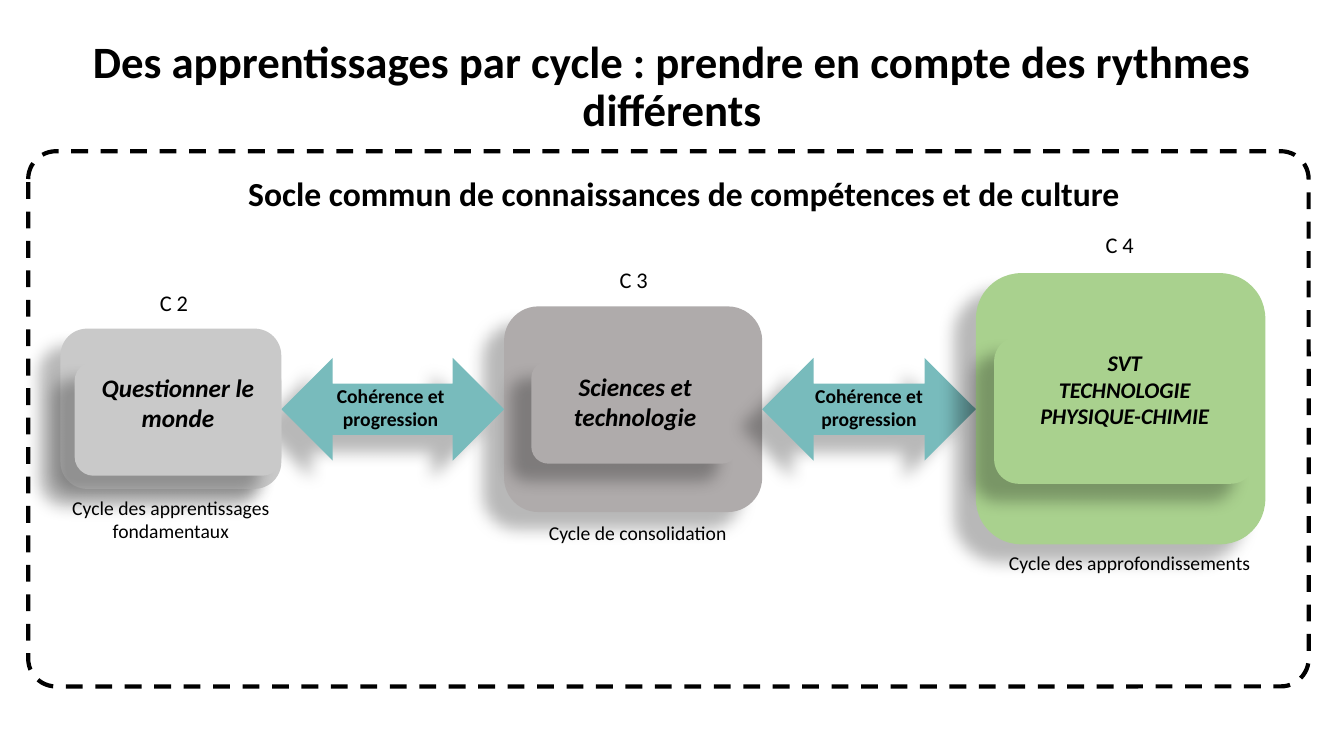
from lxml import etree
from pptx import Presentation
from pptx.dml.color import RGBColor
from pptx.enum.dml import MSO_LINE
from pptx.enum.shapes import MSO_SHAPE
from pptx.enum.text import MSO_ANCHOR, MSO_AUTO_SIZE, PP_ALIGN
from pptx.oxml.ns import qn
from pptx.util import Pt

PX = 9144
TITLE_ONLY = 5
ROUNDED = MSO_SHAPE.ROUNDED_RECTANGLE
DOUBLE_ARROW = MSO_SHAPE.LEFT_RIGHT_ARROW
DASH = MSO_LINE.DASH
TOP, MIDDLE = MSO_ANCHOR.TOP, MSO_ANCHOR.MIDDLE
NO_FIT = MSO_AUTO_SIZE.NONE
CENTER = PP_ALIGN.CENTER
FONT = "Calibri"

BLACK = RGBColor(0, 0, 0)
TAUPE = RGBColor(0xAF, 0xAB, 0xAB)
GRAY = RGBColor(0xC9, 0xC9, 0xC9)
GREEN = RGBColor(0xA9, 0xD1, 0x8E)
TEAL = RGBColor(0x78, 0xBB, 0xBC)

CYCLE_2 = dict(
    box=(60, 326, 219, 159), color=GRAY,
    subject=["Questionner le monde"], subject_box=(14, 33, 205, 113), subject_size=18,
    label="C 2", label_at=(33, -44),
    caption="Cycle des apprentissages fondamentaux", caption_box=(-14, 161, 247, 116))
CYCLE_3 = dict(
    box=(500, 304, 256, 204), color=TAUPE,
    subject=["Sciences et technologie"], subject_box=(27, 54, 206, 102), subject_size=18,
    label="C 3", label_at=(49, -45),
    caption="Cycle de consolidation", caption_box=(9, 208, 247, 82))
CYCLE_4 = dict(
    box=(968, 271, 287, 269), color=GREEN,
    subject=["SVT", "TECHNOLOGIE", "PHYSIQUE-CHIMIE"],
    subject_box=(18, 63, 259, 146), subject_size=16,
    label="C 4", label_at=(63, -47),
    caption="Cycle des approfondissements", caption_box=(9, 271, 287, 82))


def to_emu(box):
    return [length * PX for length in box]


def write(shape, lines, size, bold=False, italic=False, anchor=TOP, insets=(10, 5, 10, 5)):
    frame = shape.text_frame
    frame.word_wrap = True
    frame.auto_size = NO_FIT
    frame.vertical_anchor = anchor
    (frame.margin_left, frame.margin_top,
     frame.margin_right, frame.margin_bottom) = to_emu(insets)
    frame.text = "\n".join(lines)
    for para in frame.paragraphs:
        para.alignment = CENTER
        font = para.font
        font.name, font.size, font.color.rgb = FONT, Pt(size), BLACK
        font.bold, font.italic = bold, italic
    return frame


def add_text(page, box, text, size, **style):
    return write(page.shapes.add_textbox(*to_emu(box)), [text], size, **style)


def add_shadow(shape):
    effects = shape._element.spPr.find(qn("a:effectLst"))
    shadow = etree.SubElement(effects, qn("a:outerShdw"), blurRad=str(Pt(11.8)),
                              dist=str(Pt(19.7)), dir=str(141 * 60000),
                              algn="ctr", rotWithShape="0")
    color = etree.SubElement(shadow, qn("a:srgbClr"), val=str(BLACK))
    etree.SubElement(color, qn("a:alpha"), val="28000")


def add_block(page, kind, box, color):
    block = page.shapes.add_shape(kind, *to_emu(box))
    block.shadow.inherit = False
    block.fill.solid()
    block.fill.fore_color.rgb = color
    block.line.fill.background()
    add_shadow(block)
    return block


def add_title(page, box):
    title = page.shapes.title
    title.left, title.top, title.width, title.height = to_emu(box)
    frame = write(title, ["Des apprentissages par cycle : prendre en compte des rythmes différents"],
                  32, bold=True)
    frame.paragraphs[0].line_spacing = 0.9


def add_common_base(page, box):
    left, top, width, height = box
    border = page.shapes.add_shape(ROUNDED, *to_emu(box))
    border.shadow.inherit = False
    border.adjustments[0] = 0.052
    border.fill.background()
    border.line.color.rgb = BLACK
    border.line.width = Pt(3)
    border.line.dash_style = DASH
    frame = add_text(page, (left + 24, top, width - 17, 89),
                     "Socle commun de connaissances de compétences et de culture",
                     24, bold=True, anchor=MIDDLE, insets=(2, 2, 2, 2))
    frame.paragraphs[0].line_spacing = 0.9


def add_cycle(page, box, color, subject, subject_box, subject_size,
              label, label_at, caption, caption_box):
    def inside(x, y, width, height):
        return box[0] + x, box[1] + y, width, height

    add_block(page, ROUNDED, box, color)
    subject_block = add_block(page, ROUNDED, inside(*subject_box), color)
    write(subject_block, subject, subject_size, bold=True, italic=True)
    add_text(page, inside(*caption_box), caption, 14)
    add_text(page, inside(*label_at, 159, 53), label, 16)


def add_progression(page, before, after, left_inset):
    start = before[0] + before[2]
    arrow = add_block(page, DOUBLE_ARROW, (start, 355, after[0] - start, 102), TEAL)
    write(arrow, ["Cohérence et progression"], 14, bold=True, insets=(left_inset, 0, 4, 5))


def main():
    deck = Presentation()
    deck.slide_width, deck.slide_height = to_emu((1333, 750))
    page = deck.slides.add_slide(deck.slide_layouts[TITLE_ONLY])
    add_title(page, (0, 34, 1333, 91))
    add_common_base(page, (28, 150, 1270, 531))
    add_cycle(page, **CYCLE_3)
    add_progression(page, CYCLE_2["box"], CYCLE_3["box"], 0)
    add_progression(page, CYCLE_3["box"], CYCLE_4["box"], 4)
    add_cycle(page, **CYCLE_2)
    add_cycle(page, **CYCLE_4)
    deck.save("out.pptx")


if __name__ == "__main__":
    main()
